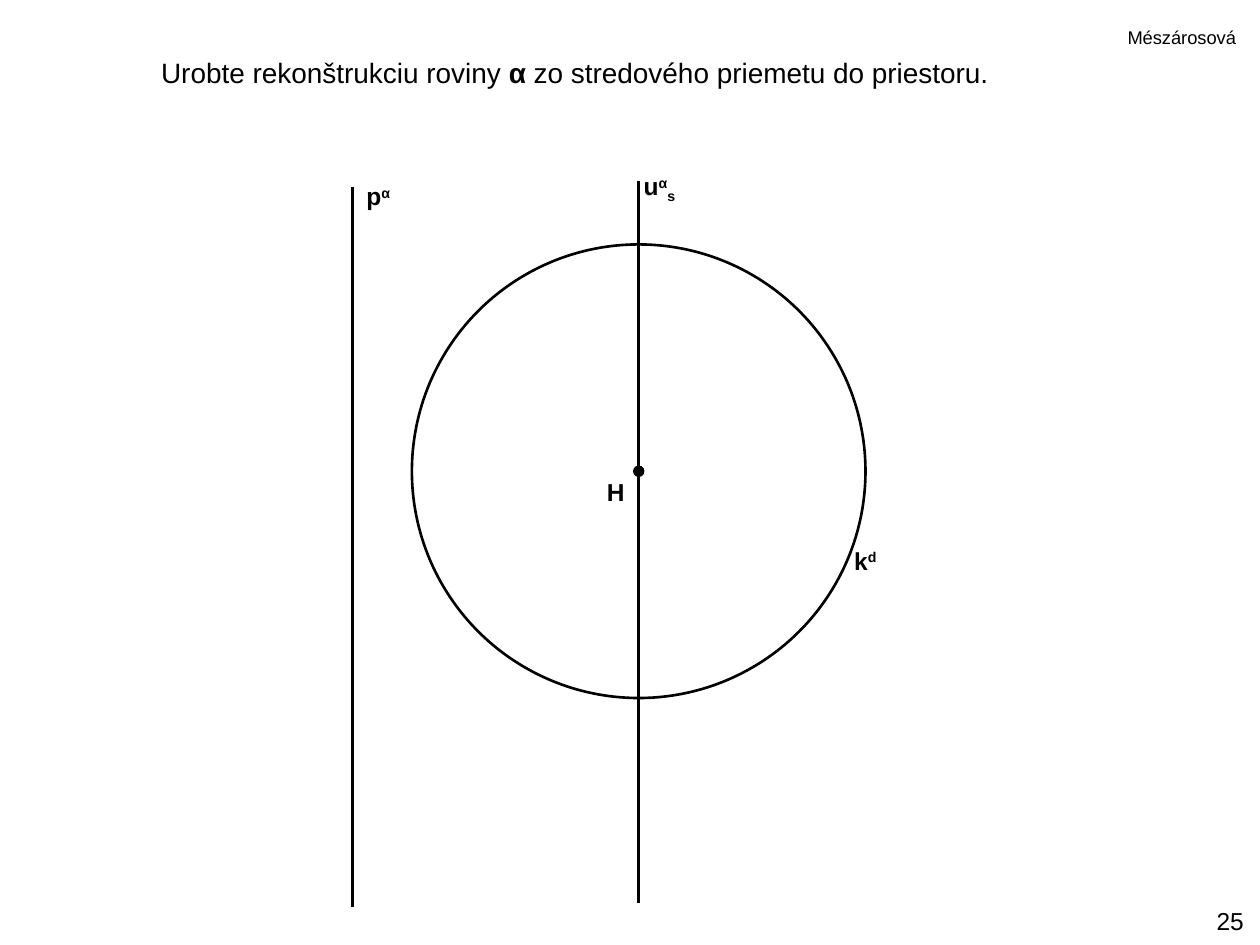
from pptx import Presentation
from pptx.dml.color import RGBColor
from pptx.enum.shapes import MSO_CONNECTOR, MSO_SHAPE
from pptx.enum.text import MSO_ANCHOR, MSO_AUTO_SIZE, PP_ALIGN
from pptx.oxml.ns import qn
from pptx.util import Pt
from lxml.etree import SubElement

INK = "000000"
SUPER, SUB = 30000, -25000


def color(value):
    return RGBColor.from_string(value)


def place_text(slide, box, runs, size, align=PP_ALIGN.LEFT, anchor=MSO_ANCHOR.TOP):
    frame = slide.shapes.add_textbox(*map(Pt, box)).text_frame
    frame.word_wrap = False
    frame.auto_size = MSO_AUTO_SIZE.SHAPE_TO_FIT_TEXT
    frame.vertical_anchor = anchor
    line = frame.paragraphs[0]
    line.alignment = align
    for words, bold, baseline in runs:
        run = line.add_run()
        run.text = words
        run.font.name = "Arial"
        run.font.size = Pt(size)
        run.font.bold = bold
        run.font.color.rgb = color(INK)
        if baseline:
            run._r.get_or_add_rPr().set("baseline", str(baseline))


def place_circle(slide, center_x, center_y, diameter, weight, fill=None):
    left, top = center_x - diameter / 2, center_y - diameter / 2
    circle = slide.shapes.add_shape(
        MSO_SHAPE.OVAL, Pt(left), Pt(top), Pt(diameter), Pt(diameter))
    circle.shadow.inherit = False
    circle.line.color.rgb = color(INK)
    circle.line.width = Pt(weight)
    if fill:
        circle.fill.solid()
        circle.fill.fore_color.rgb = color(fill)
    else:
        circle.fill.background()


def place_vertical(slide, x, bottom, top):
    trace = slide.shapes.add_connector(
        MSO_CONNECTOR.STRAIGHT, Pt(x), Pt(bottom), Pt(x), Pt(top))
    trace.line.color.rgb = color(INK)
    trace.line.width = Pt(1.5)
    SubElement(trace._element.spPr, qn("a:effectLst"))


def draw_projection(slide, box):
    left, top, width, height = box
    diameter = 259.2
    center_x, center_y = left + width - diameter / 2, top + 165.6
    place_circle(slide, center_x, center_y, diameter, 1.5)
    place_vertical(slide, center_x, top + height - 2.2, top)
    place_vertical(slide, left, top + height, top + 2.9)
    place_circle(slide, center_x, center_y, 5.8, 0.75, INK)
    labels = [
        ((0.7, -3.6, 28.8), [("p", True, 0), ("α", True, SUPER)]),
        ((159.1, -9.4, 34.6), [("u", True, 0), ("α", True, SUPER), ("s", True, SUB)]),
        ((279.4, 204.5, 28.1), [("k", True, 0), ("d", True, SUPER)]),
        ((138.2, 165.6, 24.5), [("H", True, 0)]),
    ]
    for (dx, dy, label_width), runs in labels:
        place_text(slide, (left + dx, top + dy, label_width, 24.5), runs, 14)


def place_task(slide, box):
    place_text(slide, box, [
        ("Urobte rekonštrukciu roviny ", False, 0),
        ("α", True, 0),
        (" zo stredového priemetu do priestoru.", False, 0),
    ], 16)


def place_author(slide, box):
    place_text(slide, box, [("Mészárosová", False, 0)], 10.5)


def place_page_number(slide, box):
    place_text(slide, box, [("25", False, 0)], 14, PP_ALIGN.RIGHT, MSO_ANCHOR.BOTTOM)


def main():
    deck = Presentation()
    deck.slide_width, deck.slide_height = Pt(720), Pt(540)
    slide = deck.slides.add_slide(deck.slide_layouts[6])
    draw_projection(slide, (201.6, 103.7, 293, 414.7))
    place_task(slide, (85, 28.1, 493.9, 26.6))
    place_page_number(slide, (686.2, 513.4, 31.7, 24.5))
    place_author(slide, (637.2, 11.5, 77.8, 20.2))
    deck.save("out.pptx")


if __name__ == "__main__":
    main()
